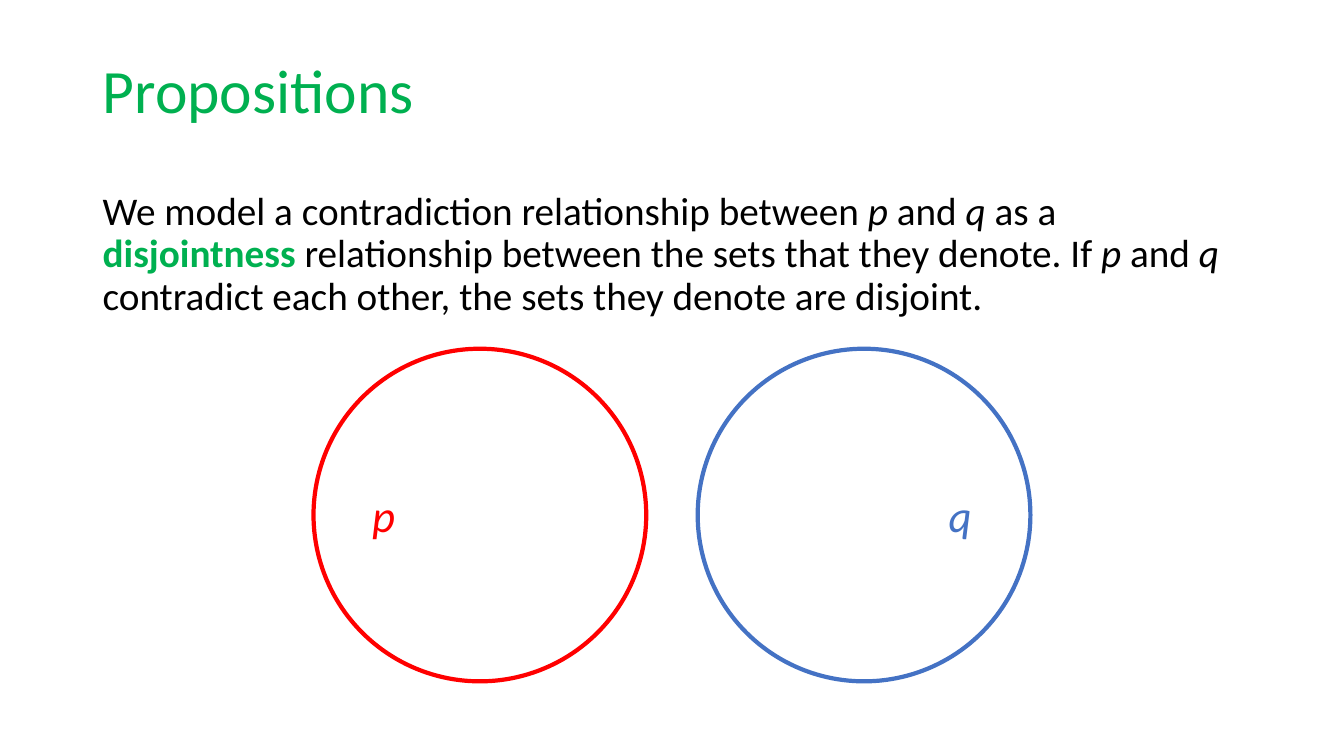
import pptx
import pptx.util
import pptx.dml.color
import pptx.enum.shapes
import pptx.enum.text

Inches, Pt = pptx.util.Inches, pptx.util.Pt
ALIGN, ANCHOR = pptx.enum.text.PP_ALIGN, pptx.enum.text.MSO_ANCHOR
COLORS = {"black": "000000", "green": "00B050", "red": "FF0000", "blue": "4472C4"}


def rgb(name):
    return pptx.dml.color.RGBColor.from_string(COLORS[name])


def style(r, size, color, bold=False, italic=False):
    r.font.name = "Calibri"
    r.font.size = Pt(size)
    r.font.color.rgb = rgb(color)
    r.font.bold = bold
    r.font.italic = italic


prs = pptx.Presentation()
prs.slide_width, prs.slide_height = Inches(13.33), Inches(7.5)
s = prs.slides.add_slide(prs.slide_layouts[5])

title = s.shapes.title
title.left, title.top = Inches(0.92), Inches(0)
title.width, title.height = Inches(11.5), Inches(1.85)
tf = title.text_frame
tf.text = "Propositions"
tf.vertical_anchor = ANCHOR.MIDDLE
p = tf.paragraphs[0]
p.alignment = ALIGN.LEFT
p.line_spacing = 0.9
style(p.runs[0], 44, "green")

body = s.shapes.add_textbox(Inches(0.92), Inches(1.85), Inches(11.5), Inches(4.91))
tf = body.text_frame
tf.word_wrap = True
p = tf.paragraphs[0]
p.line_spacing = 0.9
p.space_before = Pt(10)
parts = [
    "We model a contradiction relationship between ", "p", " and ", "q", " as a ",
    "disjointness", " relationship between the sets that they denote. If ",
    "p", " and ", "q", " contradict each other, the sets they denote are disjoint.",
]
for part in parts:
    r = p.add_run()
    r.text = part
    key = part == "disjointness"
    style(r, 28, "green" if key else "black", bold=key, italic=part in ("p", "q"))

circles = [("p", 3.11, "red", ALIGN.LEFT), ("q", 6.92, "blue", ALIGN.RIGHT)]
for label, left, color, align in circles:
    sp = s.shapes.add_shape(pptx.enum.shapes.MSO_SHAPE.OVAL,
                            Inches(left), Inches(3.46), Inches(3.3), Inches(3.3))
    sp.shadow.inherit = False
    sp.fill.background()
    sp.line.color.rgb = rgb(color)
    sp.line.width = Pt(3)
    tf = sp.text_frame
    tf.text = label
    tf.vertical_anchor = ANCHOR.MIDDLE
    p = tf.paragraphs[0]
    p.alignment = align
    style(p.runs[0], 32, color, italic=True)

prs.save("out.pptx")
